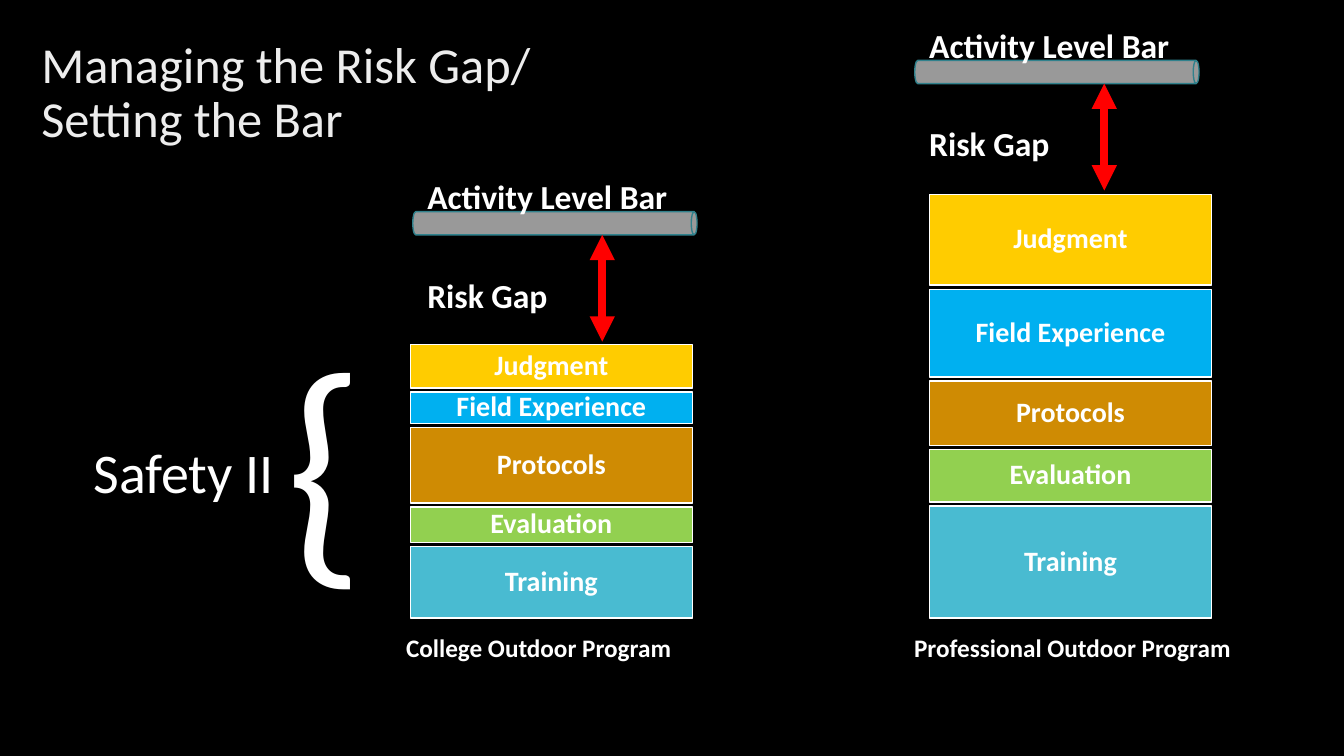
from dataclasses import dataclass

from lxml import etree
from pptx import Presentation
from pptx.dml.color import RGBColor
from pptx.enum.shapes import MSO_CONNECTOR, MSO_SHAPE
from pptx.enum.text import MSO_ANCHOR, PP_ALIGN
from pptx.oxml.ns import qn
from pptx.util import Inches, Pt

RECTANGLE, CAN = MSO_SHAPE.RECTANGLE, MSO_SHAPE.CAN
STRAIGHT = MSO_CONNECTOR.STRAIGHT
MIDDLE = MSO_ANCHOR.MIDDLE
LEFT, CENTER = PP_ALIGN.LEFT, PP_ALIGN.CENTER
GRID = Inches(0.1)
PAGE_COLUMNS, PAGE_ROWS = 133.33, 75
BLOCK_GAP = 0.4


@dataclass(frozen=True)
class Theme:
    font: str = "Calibri"
    background: str = "000000"
    title: str = "EDEDED"
    text: str = "FFFFFF"
    bar_line: str = "30818C"
    arrow: str = "FF0000"
    title_size: int = 36
    safety_size: int = 40
    brace_size: int = 180
    label_size: int = 24
    block_size: int = 20
    caption_size: int = 18


@dataclass(frozen=True)
class Box:
    left: float
    top: float
    width: float
    height: float

    def inner(self, left, top, width, height):
        return Box(self.left + left, self.top + top, width, height)

    def lengths(self):
        return [grid(n) for n in (self.left, self.top, self.width, self.height)]


THEME = Theme()
BLOCKS = [
    ("Training", "49BBD1"),
    ("Evaluation", "92D050"),
    ("Protocols", "CF8B03"),
    ("Field Experience", "00B0F0"),
    ("Judgment", "FFCC00"),
]
PROGRAMS = [
    ("College Outdoor Program", Box(39.3, 17, 29.8, 49.2),
     1.4, 2.1, [7.1, 3.5, 7.5, 3.1, 4.3]),
    ("Professional Outdoor Program", Box(89.7, 2, 36, 64.2),
     2.5, 1.5, [11.1, 5.2, 6.4, 8.7, 9]),
]


def grid(count):
    return round(count * GRID)


def color(value):
    return RGBColor.from_string(value)


def write(frame, text, size, tint=THEME.text, bold=False, align=LEFT):
    frame.word_wrap = True
    frame.text = text
    para = frame.paragraphs[0]
    para.alignment = align
    font = para.font
    font.name, font.size, font.bold = THEME.font, Pt(size), bold
    font.color.rgb = color(tint)
    return para


def add_label(page, box, text, size, bold=True):
    label = page.shapes.add_textbox(*box.lengths())
    write(label.text_frame, text, size, bold=bold)


def add_shape(shapes, kind, box, fill, line):
    shape = shapes.add_shape(kind, *box.lengths())
    shape.shadow.inherit = False
    shape.fill.solid()
    shape.fill.fore_color.rgb = color(fill)
    shape.line.color.rgb = color(line)
    shape.line.width = Pt(1)
    return shape


def add_title(page, box):
    title = page.shapes.title
    title.left, title.top, title.width, title.height = box.lengths()
    title.text_frame.vertical_anchor = MIDDLE
    para = write(title.text_frame, "Managing the Risk Gap/\vSetting the Bar",
                 THEME.title_size, THEME.title)
    para.line_spacing = 0.9


def add_stack(page, box, heights):
    stack = page.shapes.add_group_shape()
    bottom = box.top + box.height
    for (name, fill), height in zip(BLOCKS, heights):
        area = Box(box.left, bottom - height, box.width, height)
        block = add_shape(stack.shapes, RECTANGLE, area, fill, THEME.text)
        frame = block.text_frame
        frame.margin_left = frame.margin_right = Inches(0.06)
        frame.margin_top = frame.margin_bottom = Inches(0.06)
        frame.vertical_anchor = MIDDLE
        para = write(frame, name, THEME.block_size, bold=True, align=CENTER)
        para.line_spacing = 0.9
        bottom -= height + BLOCK_GAP


def add_bar(page, box):
    upright = box.inner((box.width - box.height) / 2,
                        (box.height - box.width) / 2, box.height, box.width)
    bar = add_shape(page.shapes, CAN, upright, THEME.text, THEME.bar_line)
    bar.rotation = 90
    tint = bar.fill._xPr.find(qn("a:solidFill"))[0]
    etree.SubElement(tint, qn("a:alpha"), val="60000")


def add_gap_arrow(page, box):
    center = grid(box.left)
    arrow = page.shapes.add_connector(
        STRAIGHT, center, grid(box.top), center, grid(box.top + box.height))
    arrow.line.color.rgb = color(THEME.arrow)
    arrow.line.width = Pt(6)
    line = arrow.line._get_or_add_ln()
    for end in ("a:headEnd", "a:tailEnd"):
        etree.SubElement(line, qn(end), type="triangle")
    etree.SubElement(line.getparent(), qn("a:effectLst"))


def add_gauge(page, box):
    add_label(page, box.inner(0, 9.75, 15.2, 5), "Risk Gap", THEME.label_size)
    add_bar(page, box.inner(-0.45, 4, 28.2, 2.3))
    add_gap_arrow(page, box.inner(18.35, 6.3, 0, 10.6))
    add_label(page, box.inner(0, 0, 27.8, 5), "Activity Level Bar", THEME.label_size)


def add_program(page, box, caption, stack_left, gauge_left, heights):
    add_stack(page, box.inner(stack_left, 0, 28, box.height - 4.9), heights)
    add_gauge(page, box.inner(gauge_left, 0, 27.8, 17))
    add_label(page, box.inner(0, box.height - 4, box.width, 4),
              caption, THEME.caption_size)


def add_safety(page, box):
    add_label(page, box.inner(19, 0, 10.6, box.height), "{", THEME.brace_size, False)
    add_label(page, box.inner(0, 13.3, 21.8, 7.7), "Safety II", THEME.safety_size, False)


def main():
    deck = Presentation()
    deck.slide_width, deck.slide_height = grid(PAGE_COLUMNS), grid(PAGE_ROWS)
    page = deck.slides.add_slide(deck.slide_layouts[5])
    page.background.fill.solid()
    page.background.fill.fore_color.rgb = color(THEME.background)
    add_title(page, Box(3.1, 1.7, 69.6, 15.3))
    for caption, box, stack_left, gauge_left, heights in PROGRAMS:
        add_program(page, box, caption, stack_left, gauge_left, heights)
    add_safety(page, Box(8.3, 29.6, 29.6, 31.3))
    deck.save("out.pptx")


if __name__ == "__main__":
    main()
